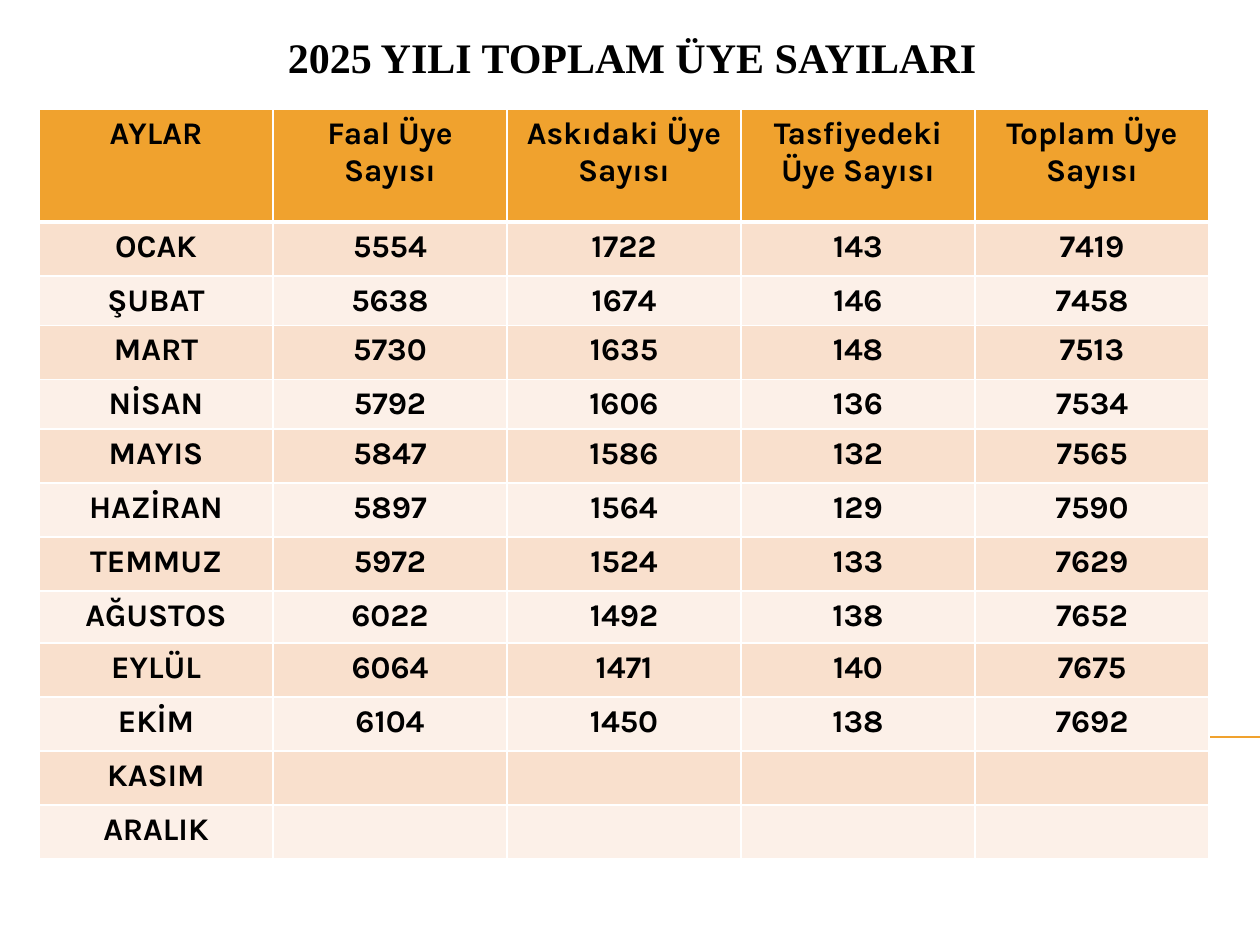
from lxml import etree
from pptx import Presentation, util as u
from pptx.dml.color import RGBColor
from pptx.enum import shapes, text
from pptx.oxml import ns

ORANGE = RGBColor(0xF0, 0xA2, 0x2E)
PEACH = RGBColor(0xF9, 0xE0, 0xCD)
CREAM = RGBColor(0xFC, 0xF0, 0xE8)
WHITE = RGBColor(0xFF, 0xFF, 0xFF)
BLACK = RGBColor(0, 0, 0)

HEADERS = ["AYLAR", "Faal Üye Sayısı", "Askıdaki Üye Sayısı",
           "Tasfiyedeki Üye Sayısı", "Toplam Üye Sayısı"]
MONTHS = [
    ["OCAK", 5554, 1722, 143, 7419],
    ["ŞUBAT", 5638, 1674, 146, 7458],
    ["MART", 5730, 1635, 148, 7513],
    ["NİSAN", 5792, 1606, 136, 7534],
    ["MAYIS", 5847, 1586, 132, 7565],
    ["HAZİRAN", 5897, 1564, 129, 7590],
    ["TEMMUZ", 5972, 1524, 133, 7629],
    ["AĞUSTOS", 6022, 1492, 138, 7652],
    ["EYLÜL", 6064, 1471, 140, 7675],
    ["EKİM", 6104, 1450, 138, 7692],
    ["KASIM", "", "", "", ""],
    ["ARALIK", "", "", "", ""],
]
ROW_HEIGHTS = [113, 54, 49, 54, 44, 54, 54, 54, 52, 54, 54, 54, 54]
COL_WIDTH = 234


def px(n):
    return u.Emu(n * 914400 // 126)


def add_text(p, content, font, size):
    p.alignment = text.PP_ALIGN.CENTER
    r = p.add_run()
    r.text = content
    r.font.name = font
    r.font.size = u.Pt(size)
    r.font.bold = True
    r.font.color.rgb = BLACK


prs = Presentation()
prs.slide_width, prs.slide_height = px(1260), px(945)
s = prs.slides.add_slide(prs.slide_layouts[5])

title = s.shapes.title
title.left, title.top, title.width, title.height = px(49), px(29), px(1166), px(59)
tf = title.text_frame
tf.word_wrap = True
tf.auto_size = text.MSO_AUTO_SIZE.NONE
tf.vertical_anchor = text.MSO_ANCHOR.BOTTOM
add_text(tf.paragraphs[0], "2025 YILI TOPLAM ÜYE SAYILARI", "Times New Roman", 24)

rule = s.shapes.add_connector(shapes.MSO_CONNECTOR.STRAIGHT, px(71), px(737), px(1260), px(737))
rule.line.color.rgb = ORANGE
rule.line.width = u.Pt(0.75)
etree.SubElement(rule._element.spPr, ns.qn("a:effectLst"))

rows = [HEADERS] + MONTHS
table = s.shapes.add_table(len(rows), len(HEADERS), px(39), px(109),
                           px(COL_WIDTH * len(HEADERS)), px(sum(ROW_HEIGHTS))).table
for col in table.columns:
    col.width = px(COL_WIDTH)

for i, values in enumerate(rows):
    table.rows[i].height = px(ROW_HEIGHTS[i])
    fill = ORANGE if i == 0 else PEACH if i % 2 else CREAM
    for j, value in enumerate(values):
        cell = table.cell(i, j)
        tcPr = cell._tc.get_or_add_tcPr()
        for side in "LRTB":
            thick = (i, side) in [(0, "B"), (1, "T")]
            ln = etree.SubElement(tcPr, ns.qn("a:ln" + side), w=str(u.Pt(3 if thick else 1)))
            solid = etree.SubElement(ln, ns.qn("a:solidFill"))
            etree.SubElement(solid, ns.qn("a:srgbClr"), val=str(WHITE))
        cell.fill.solid()
        cell.fill.fore_color.rgb = fill
        if value:
            add_text(cell.text_frame.paragraphs[0], str(value), "Karla", 18)

prs.save("out.pptx")
